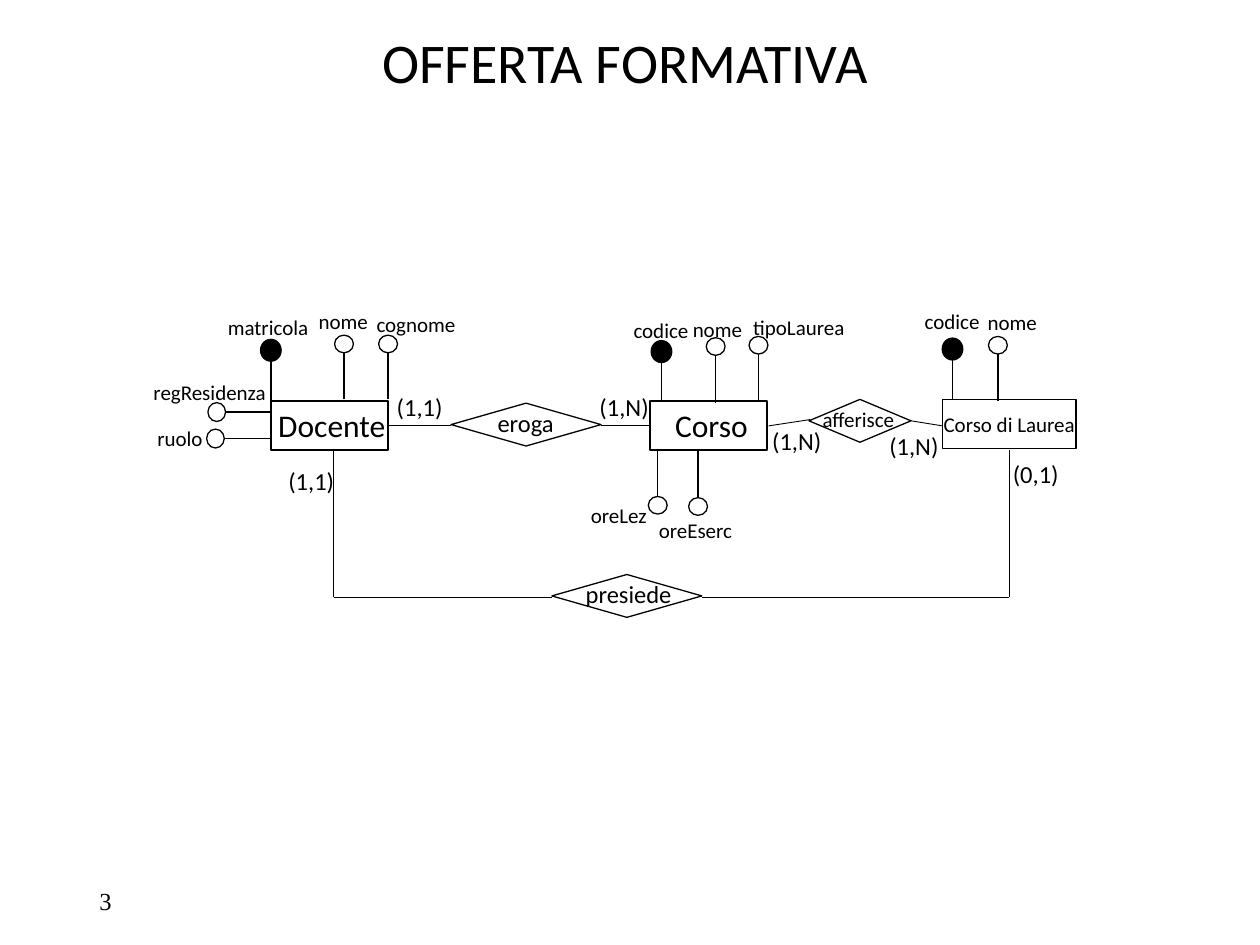
import math
from dataclasses import dataclass

import pptx
import pptx.dml.color
import pptx.enum.shapes
import pptx.enum.text
import pptx.oxml.ns
import pptx.util
from lxml import etree
from pptx.util import Inches

BLACK = pptx.dml.color.RGBColor(0x00, 0x00, 0x00)
SHAPE = pptx.enum.shapes.MSO_SHAPE
MIDDLE = pptx.enum.text.MSO_ANCHOR.MIDDLE
Point = tuple[float, float]


@dataclass
class Label:
    text: str
    left: float
    top: float
    width: float
    height: float
    size: int = 14
    font: str = "Calibri"


@dataclass
class Node:
    """An entity (rectangle) or a relationship (diamond)."""
    kind: SHAPE
    left: float
    top: float
    width: float
    height: float
    line_width: float
    label: Label


@dataclass
class Attribute:
    """A stem that ends in a circle, filled for a key."""
    name: str
    label_at: Point
    label_width: float
    start: Point
    end: Point
    key: bool = False


def format_text(frame, size: int, font: str) -> None:
    for para in frame.paragraphs:
        for span in para.runs:
            span.font.size = pptx.util.Pt(size)
            span.font.name = font
            span.font.color.rgb = BLACK


def draw_label(page, label: Label):
    box = page.shapes.add_textbox(Inches(label.left), Inches(label.top),
                                  Inches(label.width), Inches(label.height))
    box.text_frame.word_wrap = False
    box.text_frame.text = label.text
    format_text(box.text_frame, label.size, label.font)
    return box


def draw_shape(page, kind: SHAPE, left: float, top: float, width: float,
               height: float, line_width: float, filled: bool = False):
    shape = page.shapes.add_shape(kind, Inches(left), Inches(top),
                                  Inches(width), Inches(height))
    shape.shadow.inherit = False
    if filled:
        shape.fill.solid()
        shape.fill.fore_color.rgb = BLACK
    else:
        shape.fill.background()
    shape.line.color.rgb = BLACK
    shape.line.width = pptx.util.Pt(line_width)
    return shape


def draw_line(page, start: Point, end: Point, line_width: float) -> None:
    line = page.shapes.add_connector(
        pptx.enum.shapes.MSO_CONNECTOR.STRAIGHT,
        *(Inches(value) for value in start + end))
    line.line.color.rgb = BLACK
    line.line.width = pptx.util.Pt(line_width)
    etree.SubElement(line._element.spPr, pptx.oxml.ns.qn("a:effectLst"))


def draw_node(page, node: Node) -> None:
    draw_shape(page, node.kind, node.left, node.top, node.width, node.height,
               node.line_width)
    draw_label(page, node.label)


def draw_attribute(page, attribute: Attribute) -> None:
    draw_line(page, attribute.start, attribute.end, 0.75)
    width, height = (0.17, 0.16) if attribute.key else (0.14, 0.15)
    # The circle touches the end of the stem and turns with it
    angle = math.atan2(attribute.end[1] - attribute.start[1],
                       attribute.end[0] - attribute.start[0])
    radius = min(width, height) / 2
    center_x = attribute.end[0] + radius * math.cos(angle)
    center_y = attribute.end[1] + radius * math.sin(angle)
    circle = draw_shape(page, SHAPE.OVAL, center_x - width / 2,
                        center_y - height / 2, width, height,
                        1 if attribute.key else 0.75, attribute.key)
    circle.rotation = math.degrees(angle) % 360
    draw_label(page, Label(attribute.name, *attribute.label_at,
                           attribute.label_width, 0.3, 12))


NODES = [
    Node(SHAPE.RECTANGLE, 2.15, 3.18, 0.93, 0.39, 1,
         Label("Docente", 2.11, 3.17, 1.08, 0.4, 18)),
    Node(SHAPE.RECTANGLE, 5.16, 3.18, 0.93, 0.39, 1,
         Label("Corso", 5.26, 3.17, 0.78, 0.4, 18)),
    Node(SHAPE.RECTANGLE, 7.48, 3.17, 1.06, 0.39, 1,
         Label("Corso di Laurea", 7.39, 3.22, 1.25, 0.3, 12)),
    Node(SHAPE.DIAMOND, 3.58, 3.2, 1.19, 0.34, 0.75,
         Label("eroga", 3.85, 3.19, 0.65, 0.34)),
    Node(SHAPE.DIAMOND, 6.42, 3.17, 0.81, 0.34, 0.75,
         Label("afferisce", 6.43, 3.18, 0.78, 0.3, 12)),
    Node(SHAPE.DIAMOND, 4.38, 4.56, 1.19, 0.34, 0.75,
         Label("presiede", 4.55, 4.55, 0.9, 0.34)),
]

ATTRIBUTES = [
    # Docente
    Attribute("matricola", (1.71, 2.45), 0.85, (2.15, 3.18), (2.15, 2.86), True),
    Attribute("nome", (2.43, 2.4), 0.6, (2.73, 3.17), (2.73, 2.8)),
    Attribute("cognome", (2.89, 2.42), 0.84, (3.08, 3.17), (3.08, 2.8)),
    Attribute("regResidenza", (1.12, 2.96), 1.1, (2.16, 3.27), (1.79, 3.27)),
    Attribute("ruolo", (1.15, 3.33), 0.56, (2.16, 3.48), (1.78, 3.48)),
    # Corso
    Attribute("codice", (4.93, 2.47), 0.64, (5.25, 3.19), (5.25, 2.87), True),
    Attribute("nome", (5.4, 2.46), 0.6, (5.68, 3.2), (5.68, 2.82)),
    Attribute("tipoLaurea", (5.88, 2.45), 0.93, (6.02, 3.18), (6.02, 2.81)),
    Attribute("oreLez", (4.59, 3.94), 0.65, (5.22, 3.57), (5.22, 3.94)),
    Attribute("oreEserc", (5.13, 4.06), 0.79, (5.54, 3.58), (5.54, 3.95)),
    # Corso di Laurea
    Attribute("codice", (7.24, 2.4), 0.64, (7.56, 3.17), (7.56, 2.85), True),
    Attribute("nome", (7.74, 2.41), 0.6, (7.92, 3.18), (7.92, 2.81)),
]

LINKS = [
    ((3.08, 3.38), (3.58, 3.38)), ((4.77, 3.38), (5.16, 3.38)),
    ((6.1, 3.38), (6.43, 3.33)), ((7.23, 3.34), (7.48, 3.38)),
    ((2.65, 3.56), (2.65, 4.74)), ((2.65, 4.74), (4.38, 4.74)),
    ((8.01, 3.57), (8.01, 4.74)), ((5.57, 4.74), (8.01, 4.74)),
]

CARDINALITIES = [
    ("(1,1)", 3.05, 3.06), ("(1,N)", 4.66, 3.06), ("(1,N)", 6.03, 3.33),
    ("(1,N)", 6.96, 3.37), ("(0,1)", 7.94, 3.59), ("(1,1)", 2.19, 3.65),
]


def main() -> None:
    deck = pptx.Presentation()
    deck.slide_width, deck.slide_height = Inches(10), Inches(7.5)
    page = deck.slides.add_slide(deck.slide_layouts.get_by_name("Title Only"))

    # Title and page number
    title = page.shapes.title
    title.left, title.top = Inches(0.19), Inches(0.12)
    title.width, title.height = Inches(9.54), Inches(0.8)
    title.text_frame.text = "OFFERTA FORMATIVA"
    title.text_frame.vertical_anchor = MIDDLE
    title.text_frame.paragraphs[0].line_spacing = 0.9
    format_text(title.text_frame, 32, "Calibri")
    number = draw_label(page, Label("3", 0.69, 6.95, 2.25, 0.4, 14,
                                    "Times New Roman"))
    number.text_frame.word_wrap = True
    number.text_frame.vertical_anchor = MIDDLE

    # Entity-relationship diagram
    for node in NODES:
        draw_node(page, node)
    for start, end in LINKS:
        draw_line(page, start, end, 0.5)
    for attribute in ATTRIBUTES:
        draw_attribute(page, attribute)
    for text, left, top in CARDINALITIES:
        draw_label(page, Label(text, left, top, 0.6, 0.34))

    deck.save("out.pptx")


if __name__ == "__main__":
    main()
